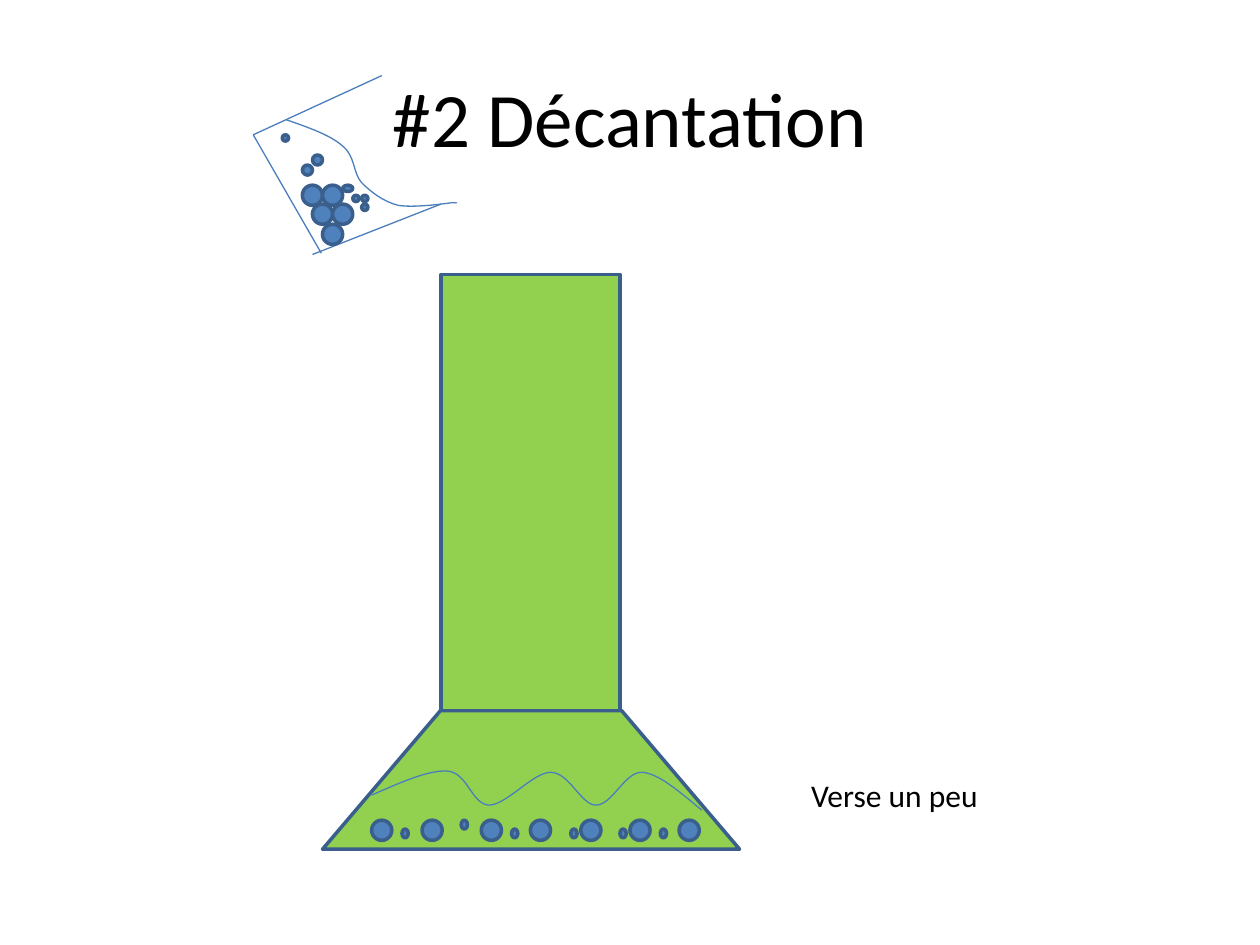
from lxml.etree import SubElement
from pptx import Presentation
from pptx.dml.color import RGBColor
from pptx.enum.shapes import MSO_CONNECTOR, MSO_SHAPE
from pptx.enum.text import MSO_ANCHOR, PP_ALIGN
from pptx.oxml.ns import qn
from pptx.util import Inches, Pt

THEME = {
    "font": "Calibri", "title": 44, "label": 18, "text": RGBColor(0, 0, 0),
    "flask": RGBColor(0x92, 0xD0, 0x50), "grain": RGBColor(0x4F, 0x81, 0xBD),
    "outline": RGBColor(0x3A, 0x5F, 0x8C), "outline_width": 2,
    "stroke": RGBColor(0x4B, 0x7E, 0xBC), "stroke_width": 0.75,
}


def write(frame, text, size, align=PP_ALIGN.LEFT, anchor=MSO_ANCHOR.TOP, wrap=True):
    frame.word_wrap = wrap
    frame.vertical_anchor = anchor
    paragraph = frame.paragraphs[0]
    paragraph.alignment = align
    run = paragraph.add_run()
    run.text = text
    run.font.name = THEME["font"]
    run.font.size = Pt(size)
    run.font.color.rgb = THEME["text"]


def add_solid(kind, left, top, width, height, color):
    solid = slide.shapes.add_shape(
        kind, Inches(left), Inches(top), Inches(width), Inches(height))
    solid.shadow.inherit = False
    solid.fill.solid()
    solid.fill.fore_color.rgb = color
    solid.line.color.rgb = THEME["outline"]
    solid.line.width = Pt(THEME["outline_width"])
    return solid


prs = Presentation()
prs.slide_width, prs.slide_height = Inches(10), Inches(7.5)
slide = prs.slides.add_slide(prs.slide_layouts[5])

# Title
title = slide.shapes.title
title.left, title.top = Inches(0.5), Inches(0.3)
title.width, title.height = Inches(9), Inches(1.25)
write(title.text_frame, "#2 Décantation", THEME["title"],
      align=PP_ALIGN.CENTER, anchor=MSO_ANCHOR.MIDDLE)

# Flask: flared base and neck
base = add_solid(MSO_SHAPE.TRAPEZOID, 2.56, 5.64, 3.31, 1.1, THEME["flask"])
base.adjustments[0] = 0.851
add_solid(MSO_SHAPE.RECTANGLE, 3.5, 2.18, 1.42, 3.46, THEME["flask"])

# Tilted beaker: top wall, bottom and lower wall
for x1, y1, x2, y2 in [(3.03, 0.6, 2.01, 1.07), (2.55, 2.01, 2.01, 1.07),
                       (3.5, 1.62, 2.48, 2.02)]:
    wall = slide.shapes.add_connector(
        MSO_CONNECTOR.STRAIGHT, Inches(x1), Inches(y1), Inches(x2), Inches(y2))
    wall.line.color.rgb = THEME["stroke"]
    wall.line.width = Pt(THEME["stroke_width"])
    SubElement(wall.element.spPr, qn("a:effectLst"))

# Water surfaces: a start, then two control points and an end per curve
beaker_surface = [
    (2.27, 0.95), (2.44, 1.01), (2.62, 1.07), (2.72, 1.16),
    (2.82, 1.24), (2.8, 1.37), (2.87, 1.45), (2.94, 1.52), (3.04, 1.6), (3.16, 1.63),
    (3.28, 1.65), (3.51, 1.62), (3.58, 1.61), (3.65, 1.61), (3.62, 1.61), (3.59, 1.61)]
flask_surface = [
    (2.95, 6.31), (3.18, 6.21), (3.4, 6.11), (3.55, 6.12),
    (3.71, 6.13), (3.74, 6.38), (3.88, 6.39), (4.02, 6.39), (4.23, 6.13), (4.37, 6.13),
    (4.52, 6.13), (4.61, 6.39), (4.73, 6.39), (4.86, 6.39), (4.96, 6.12), (5.1, 6.13),
    (5.23, 6.14), (5.4, 6.29), (5.57, 6.43)]
for surface in (beaker_surface, flask_surface):
    start, *rest = [(Inches(x), Inches(y)) for x, y in surface]
    builder = slide.shapes.build_freeform(*start)
    builder.add_line_segments(rest, close=False)
    water = builder.convert_to_shape()
    water.shadow.inherit = False
    water.fill.background()
    water.line.color.rgb = THEME["stroke"]
    water.line.width = Pt(THEME["stroke_width"])
    # Turn every three straight segments into one Bézier curve
    outline = water.element.find(".//" + qn("a:path"))
    segments = outline.findall(qn("a:lnTo"))
    for i in range(0, len(segments), 3):
        curve = SubElement(outline, qn("a:cubicBezTo"))
        for segment in segments[i:i + 3]:
            curve.append(segment[0])
            outline.remove(segment)

# Grains: (width, height) and their (left, top) places
grains = [
    # in the beaker
    ((0.16, 0.16), [(2.48, 1.62), (2.56, 1.78), (2.4, 1.47), (2.56, 1.47), (2.64, 1.62)]),
    ((0.05, 0.05), [(2.87, 1.62), (2.8, 1.55), (2.87, 1.55), (2.24, 1.07)]),
    ((0.08, 0.05), [(2.72, 1.47)]),
    ((0.08, 0.08), [(2.48, 1.23), (2.4, 1.31)]),
    # settled in the flask
    ((0.16, 0.16), [(x, 6.51) for x in (2.95, 3.35, 3.82, 4.21, 4.61, 5, 5.39)]),
    ((0.05, 0.07), [(x, 6.58) for x in (3.19, 5.24, 4.92, 4.53, 4.06)] + [(3.66, 6.51)]),
]
for (width, height), places in grains:
    for left, top in places:
        add_solid(MSO_SHAPE.OVAL, left, top, width, height, THEME["grain"])

# Label
label = slide.shapes.add_textbox(Inches(6.34), Inches(6.11), Inches(1.54), Inches(0.4))
write(label.text_frame, "Verse un peu", THEME["label"], wrap=False)

prs.save("out.pptx")
